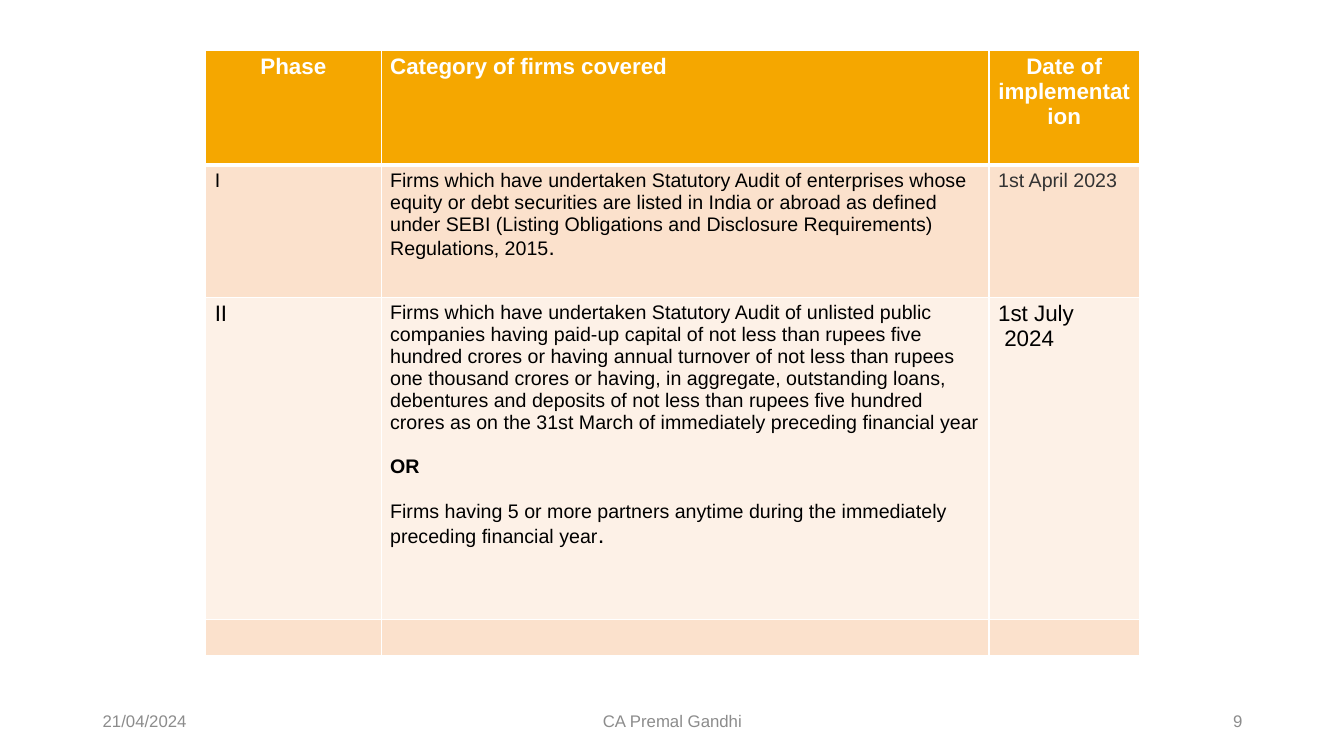
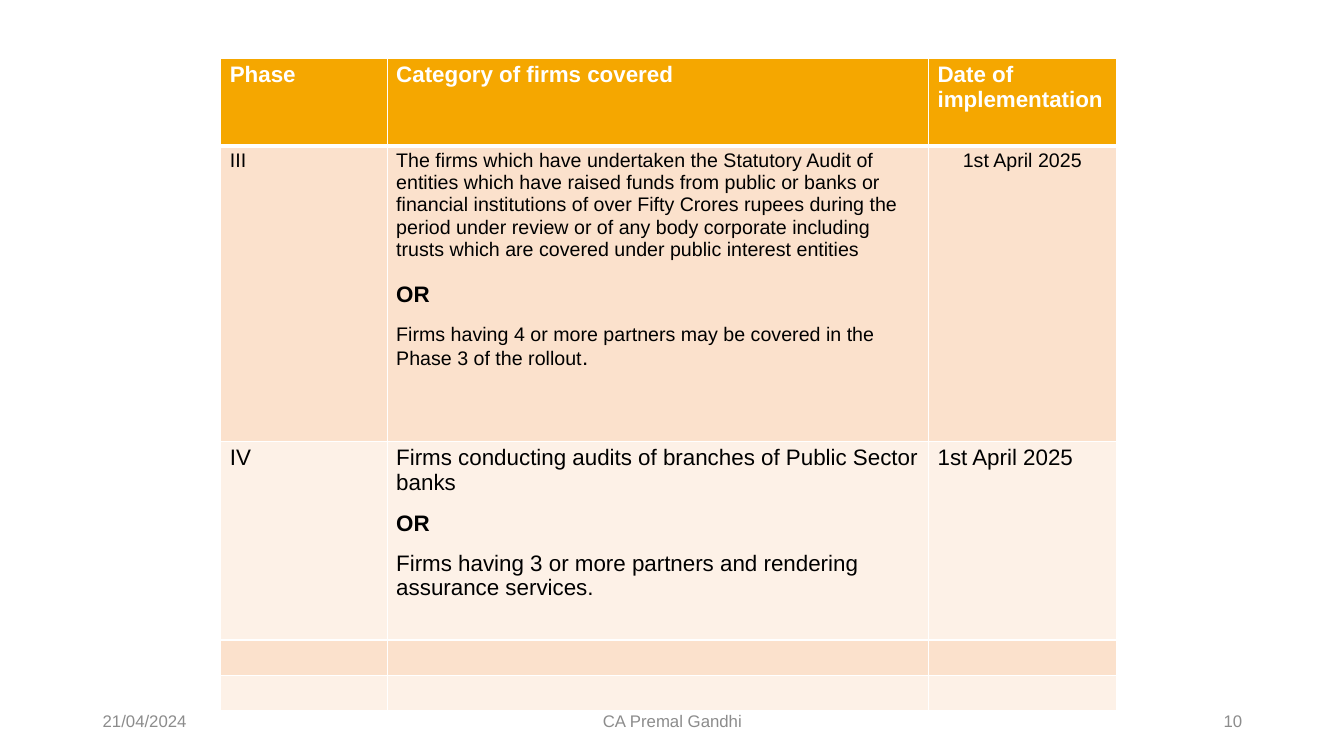
import pptx
import pptx.util
import pptx.dml.color
import pptx.enum.text
import pptx.oxml.ns
from lxml import etree

Inches = pptx.util.Inches
Pt = pptx.util.Pt
RGB = pptx.dml.color.RGBColor.from_string
ALIGN = pptx.enum.text.PP_ALIGN
ANCHOR = pptx.enum.text.MSO_ANCHOR

# Theme: colours, type styles (size, bold, colour) and borders
THEME = {
    "font": "Arial",
    "header_fill": "F5A700",
    "band_fills": ("FBE1CC", "FDF1E7"),
    "border": "FFFFFF",
    "thin": 1,
    "thick": 3,
    "styles": {
        "header": (16, True, "FFFFFF"),
        "small": (14, False, "000000"),
        "grey": (14, False, "333333"),
        "body": (16, False, "000000"),
        "stop": (17, False, "000000"),
        "small_or": (14, True, "000000"),
        "body_or": (16, True, "000000"),
        "footer": (12, False, "8C8C8C"),
    },
}
ALIGNS = {"l": ALIGN.LEFT, "c": ALIGN.CENTER, "r": ALIGN.RIGHT}
HEADINGS = ("Phase", "Category of firms covered", "Date of implementation")

# Footer: left, width, alignment, text (None is the slide number)
FOOTER_TOP, FOOTER_HEIGHT = 6.95, 0.4
FOOTERS = [
    (0.92, 3, "l", "21/04/2024"),
    (4.42, 4.5, "c", "CA Premal Gandhi"),
    (9.42, 3, "r", None),
]


# A paragraph is (spans, alignment, points before); a span is (text, style)
def line(text, style, align="l", before=0, stop=None):
    spans = [(text, style)] + ([(".", stop)] if stop else [])
    return spans, align, before


# Content of each slide; every row holds one list of paragraphs per cell
SLIDES = [
    {
        "number": 9,
        "at": (2.04, 0.5),
        "columns": (1.74, 6.03, 1.49),
        "heights": (1.14, 1.31, 3.2, 0.35),
        "heading_aligns": "clc",
        "rows": [
            [
                [line("I", "small")],
                [line("Firms which have undertaken Statutory Audit of enterprises whose equity "
                      "or debt securities are listed in India or abroad as defined under SEBI "
                      "(Listing Obligations and Disclosure Requirements) Regulations, 2015",
                      "small", stop="body")],
                [line("1st April 2023", "grey")],
            ],
            [
                [line("II", "body")],
                [line("Firms which have undertaken Statutory Audit of unlisted public companies "
                      "having paid-up capital of not less than rupees five hundred crores or "
                      "having annual turnover of not less than rupees one thousand crores or "
                      "having, in aggregate, outstanding loans, debentures and deposits of not "
                      "less than rupees five hundred crores as on the 31st March of immediately "
                      "preceding financial year", "small"),
                 line("OR", "small_or", before=16),
                 line("Firms having 5 or more partners anytime during the immediately preceding "
                      "financial year", "small", before=16, stop="stop")],
                [line("1st July", "body"), line(" 2024", "body")],
            ],
            [[], [], []],
        ],
    },
    {
        "number": 10,
        "at": (2.19, 0.58),
        "columns": (1.65, 5.37, 1.86),
        "heights": (0.87, 2.93, 1.97, 0.35, 0.35),
        "heading_aligns": "lll",
        "rows": [
            [
                [line("III", "small")],
                [line("The firms which have undertaken the Statutory Audit of entities which have "
                      "raised funds from public or banks or financial institutions of over Fifty "
                      "Crores rupees during the period under review or of any body corporate "
                      "including trusts which are covered under public interest entities", "small"),
                 line("OR", "body_or", before=16),
                 line("Firms having 4 or more partners may be covered in the Phase 3 of the "
                      "rollout", "small", before=11.5, stop="body")],
                [line("1st April 2025", "small", "c")],
            ],
            [
                [line("IV", "body")],
                [line("Firms conducting audits of branches of Public Sector banks", "body"),
                 line("OR", "body_or", before=11.5),
                 line("Firms having 3 or more partners and rendering assurance services.",
                      "body", before=10.5)],
                [line("1st April 2025", "body")],
            ],
            [[], [], []],
            [[], [], []],
        ],
    },
]


def write(frame, paragraphs):
    """Fill a text frame with paragraphs."""
    for index, (spans, align, before) in enumerate(paragraphs):
        para = frame.add_paragraph() if index else frame.paragraphs[0]
        para.alignment = ALIGNS[align]
        para.space_before = Pt(before)
        for text, style in spans:
            size, bold, colour = THEME["styles"][style]
            span = para.add_run()
            span.text = text
            values = {"name": THEME["font"], "size": Pt(size), "bold": bold}
            for name, value in values.items():
                setattr(span.font, name, value)
            span.font.color.rgb = RGB(colour)


def set_borders(cell, top, bottom):
    """Draw the four borders; widths are in points."""
    qn = pptx.oxml.ns.qn
    properties = cell._tc.get_or_add_tcPr()
    thin = THEME["thin"]
    for side, width in (("L", thin), ("R", thin), ("T", top), ("B", bottom)):
        border = etree.SubElement(properties, qn("a:ln" + side), w=str(Pt(width)))
        fill = etree.SubElement(border, qn("a:solidFill"))
        etree.SubElement(fill, qn("a:srgbClr"), val=THEME["border"])


def format_cell(cell, row, paragraphs):
    values = {"margin_left": Inches(0.09), "margin_right": Inches(0.09),
              "margin_top": Inches(0.04), "margin_bottom": Inches(0.04)}
    for name, value in values.items():
        setattr(cell, name, value)
    # The heavy rule runs between the heading row and the first band
    thin, thick = THEME["thin"], THEME["thick"]
    set_borders(cell, thick if row == 1 else thin, thick if row == 0 else thin)
    cell.fill.solid()
    bands = THEME["band_fills"]
    cell.fill.fore_color.rgb = RGB(bands[(row - 1) % 2] if row else THEME["header_fill"])
    write(cell.text_frame, paragraphs)
    if not paragraphs:
        # A small end mark lets an empty row keep its height
        etree.SubElement(cell.text_frame.paragraphs[0]._p,
                         pptx.oxml.ns.qn("a:endParaRPr"), sz="1200")


def add_phase_table(page, content):
    headings = [[line(text, "header", align)]
                for text, align in zip(HEADINGS, content["heading_aligns"])]
    rows = [headings] + content["rows"]
    columns, heights = content["columns"], content["heights"]
    left, top = content["at"]
    table = page.shapes.add_table(len(rows), len(columns), Inches(left), Inches(top),
                                  Inches(sum(columns)), Inches(sum(heights))).table
    table.first_row = table.horz_banding = False
    for column, width in zip(table.columns, columns):
        column.width = Inches(width)
    for row, height in zip(table.rows, heights):
        row.height = Inches(height)
    for row, cells in enumerate(rows):
        for column, paragraphs in enumerate(cells):
            format_cell(table.cell(row, column), row, paragraphs)


def add_footers(page, number):
    for left, width, align, text in FOOTERS:
        box = page.shapes.add_textbox(Inches(left), Inches(FOOTER_TOP),
                                      Inches(width), Inches(FOOTER_HEIGHT))
        box.text_frame.word_wrap = True
        box.text_frame.vertical_anchor = ANCHOR.MIDDLE
        write(box.text_frame, [line(text or str(number), "footer", align)])


def main():
    deck = pptx.Presentation()
    deck.slide_width, deck.slide_height = Inches(13.33), Inches(7.5)
    for content in SLIDES:
        page = deck.slides.add_slide(deck.slide_layouts[6])
        add_footers(page, content["number"])
        add_phase_table(page, content)
    deck.save("out.pptx")


if __name__ == "__main__":
    main()
